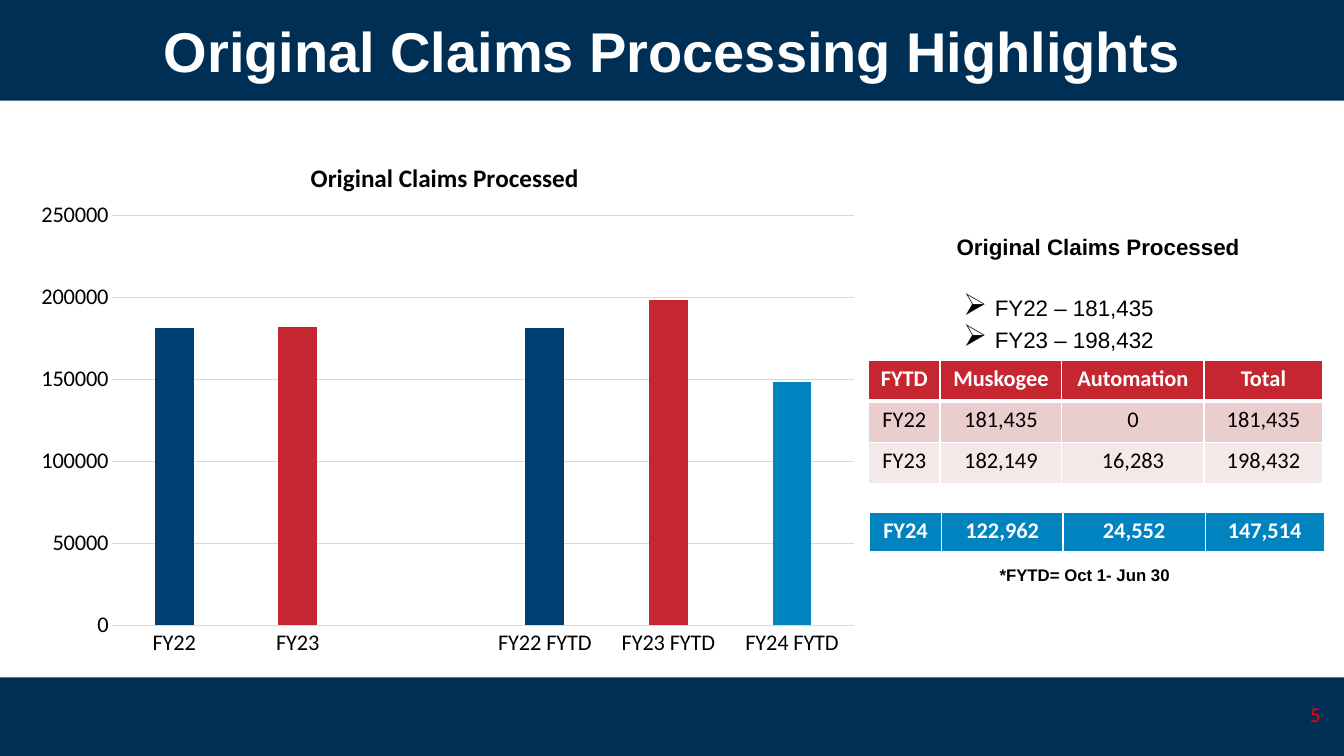
"""Build the claims processing highlights slide."""
import dataclasses
import typing

import lxml.etree
import pptx
import pptx.chart.data
import pptx.dml.color
import pptx.enum.chart
import pptx.enum.shapes
import pptx.enum.text
import pptx.oxml.ns
import pptx.util

Cm = pptx.util.Cm
Pt = pptx.util.Pt
qn = pptx.oxml.ns.qn
Align = pptx.enum.text.PP_ALIGN


@dataclasses.dataclass(frozen=True)
class Theme:
    band: str = "002F56"
    navy: str = "003F72"
    red: str = "C62630"
    blue: str = "0083BE"
    pink: str = "EACDCD"
    pale: str = "F5E8E8"
    grid: str = "D9D9D9"
    white: str = "FFFFFF"
    black: str = "000000"
    number: str = "FF0000"
    heading_font: str = "Arial"
    data_font: str = "Calibri"
    title: float = 40
    chart_title: float = 18
    body: float = 16
    page: float = 15
    note: float = 12


T = Theme()


class Box(typing.NamedTuple):
    x: float
    y: float
    w: float
    h: float

    def emu(self) -> list[int]:
        return [Cm(v) for v in self]


@dataclasses.dataclass(frozen=True)
class Style:
    size: float
    font: str
    color: str = T.black
    bold: bool = False


@dataclasses.dataclass(frozen=True)
class Row:
    cells: tuple[str, ...]
    fill: str
    strong: bool = False


@dataclasses.dataclass(frozen=True)
class Grid:
    x: float
    y: float
    rows: tuple[Row, ...]


@dataclasses.dataclass(frozen=True)
class Bar:
    label: str
    value: float | None = None
    color: str = T.white


COLS = (1.8, 3.07, 3.58, 3.0)
ROW_H = 1.04
GRIDS = (
    Grid(21.89, 9.07, (
        Row(("FYTD", "Muskogee", "Automation", "Total"), T.red, True),
        Row(("FY22", "181,435", "0", "181,435"), T.pink),
        Row(("FY23", "182,149", "16,283", "198,432"), T.pale),
    )),
    Grid(21.92, 12.9, (Row(("FY24", "122,962", "24,552", "147,514"), T.blue, True),)),
)
BARS = (
    Bar("FY22", 181000, T.navy),
    Bar("FY23", 182000, T.red),
    Bar(""),
    Bar("FY22 FYTD", 181000, T.navy),
    Bar("FY23 FYTD", 198000, T.red),
    Bar("FY24 FYTD", 148000, T.blue),
)
BULLETS = ("FY22 – 181,435", "FY23 – 198,432")


def rgb(color: str) -> pptx.dml.color.RGBColor:
    return pptx.dml.color.RGBColor.from_string(color)


def set_font(font, style: Style) -> None:
    font.size, font.name, font.bold = Pt(style.size), style.font, style.bold
    font.color.rgb = rgb(style.color)


def write(p, text: str, style: Style, align=Align.LEFT) -> None:
    p.alignment = align
    r = p.add_run()
    r.text = text
    set_font(r.font, style)


def add_band(s, box: Box):
    sp = s.shapes.add_shape(pptx.enum.shapes.MSO_SHAPE.RECTANGLE, *box.emu())
    sp.shadow.inherit = False
    sp.fill.solid()
    sp.fill.fore_color.rgb = rgb(T.band)
    sp.line.fill.background()
    return sp


def add_text(s, box: Box, text: str, style: Style, align=Align.LEFT, wrap: bool = True):
    tf = s.shapes.add_textbox(*box.emu()).text_frame
    tf.word_wrap = wrap
    write(tf.paragraphs[0], text, style, align)
    return tf


def add_bullet(tf, text: str, before: float) -> None:
    p = tf.add_paragraph()
    pr = p._p.get_or_add_pPr()
    pr.set("marL", str(Cm(3.33)))
    pr.set("indent", str(-Cm(0.79)))
    lxml.etree.SubElement(pr, qn("a:buSzPct")).set("val", "135000")
    lxml.etree.SubElement(pr, qn("a:buChar")).set("char", "➢")
    p.space_before = Pt(before)
    write(p, text, Style(T.body, T.heading_font))


def add_border(cell, side: str, width: float) -> None:
    pr = cell._tc.get_or_add_tcPr()
    ln = lxml.etree.SubElement(pr, qn(f"a:ln{side}"), w=str(Pt(width)))
    fill = lxml.etree.SubElement(ln, qn("a:solidFill"))
    lxml.etree.SubElement(fill, qn("a:srgbClr"), val=T.white)


def add_grid(s, grid: Grid) -> None:
    n = len(grid.rows)
    box = Box(grid.x, grid.y, sum(COLS), ROW_H * n)
    table = s.shapes.add_table(n, len(COLS), *box.emu()).table
    for col, width in zip(table.columns, COLS):
        col.width = Cm(width)
    for i, row in enumerate(grid.rows):
        table.rows[i].height = Cm(ROW_H)
        style = Style(T.body, T.data_font, T.white if row.strong else T.black, row.strong)
        top = 3 if i and grid.rows[i - 1].strong else 1
        widths = {"L": 1, "R": 1, "T": top, "B": 3 if row.strong else 1}
        for j, text in enumerate(row.cells):
            cell = table.cell(i, j)
            for side, width in widths.items():
                add_border(cell, side, width)
            cell.fill.solid()
            cell.fill.fore_color.rgb = rgb(row.fill)
            write(cell.text_frame.paragraphs[0], text, style, Align.CENTER)


def set_layout(parent, index: int, **values: str | float) -> None:
    for old in parent.findall(qn("c:layout")):
        parent.remove(old)
    layout = lxml.etree.Element(qn("c:layout"))
    manual = lxml.etree.SubElement(layout, qn("c:manualLayout"))
    for name, value in values.items():
        lxml.etree.SubElement(manual, qn(f"c:{name}")).set("val", str(value))
    parent.insert(index, layout)


def add_claims_chart(s, box: Box) -> None:
    data = pptx.chart.data.CategoryChartData()
    data.categories = [b.label for b in BARS]
    data.add_series("Series 1", [b.value for b in BARS])
    kind = pptx.enum.chart.XL_CHART_TYPE.COLUMN_CLUSTERED
    chart = s.shapes.add_chart(kind, *box.emu(), data).chart
    chart.has_legend = False
    set_font(chart.font, Style(T.body, T.data_font))
    chart.has_title = True
    write(chart.chart_title.text_frame.paragraphs[0], "Original Claims Processed",
          Style(T.chart_title, T.data_font, bold=True), Align.CENTER)
    edge = {"xMode": "edge", "yMode": "edge"}
    set_layout(chart.element.find(".//" + qn("c:title")), 1, **edge, x=0.33, y=0.05)
    set_layout(chart.element.find(".//" + qn("c:plotArea")), 0,
               layoutTarget="inner", **edge, x=0.1, y=0.16, w=0.88, h=0.76)
    plot = chart.plots[0]
    plot.gap_width, plot.overlap, plot.vary_by_categories = 219, -27, False
    for i, bar in enumerate(BARS):
        if bar.value is not None:
            fill = plot.series[0].points[i].format.fill
            fill.solid()
            fill.fore_color.rgb = rgb(bar.color)
    cat, val = chart.category_axis, chart.value_axis
    for axis in (cat, val):
        axis.major_tick_mark = pptx.enum.chart.XL_TICK_MARK.NONE
        set_font(axis.tick_labels.font, Style(T.body, T.data_font))
    val.minimum_scale, val.maximum_scale, val.major_unit = 0, 250000, 50000
    val.format.line.fill.background()
    for line in (cat.format.line, val.major_gridlines.format.line):
        line.color.rgb = rgb(T.grid)
        line.width = Pt(0.75)


def main() -> None:
    prs = pptx.Presentation()
    prs.slide_width, prs.slide_height = Cm(33.87), Cm(19.05)
    s = prs.slides.add_slide(prs.slide_layouts[6])
    add_band(s, Box(0, 17.07, 33.87, 1.98))
    tf = add_band(s, Box(0, 0, 33.87, 2.54)).text_frame
    write(tf.paragraphs[0], "Original Claims Processing Highlights",
          Style(T.title, T.heading_font, T.white, True), Align.CENTER)
    tf = add_text(s, Box(21.49, 5.74, 12.37, 3.2), "Original Claims Processed",
                  Style(T.body, T.heading_font, bold=True), Align.CENTER)
    for text, before in zip(BULLETS, (25, 3.2)):
        add_bullet(tf, text, before)
    add_text(s, Box(32.77, 17.55, 1.1, 0.89), "5",
             Style(T.page, T.data_font, T.number), wrap=False)
    add_claims_chart(s, Box(0.71, 3.25, 21.23, 13.59))
    for grid in GRIDS:
        add_grid(s, grid)
    add_text(s, Box(24.94, 14.1, 6, 0.8), "*FYTD= Oct 1- Jun 30",
             Style(T.note, T.heading_font, bold=True))
    prs.save("out.pptx")


if __name__ == "__main__":
    main()
